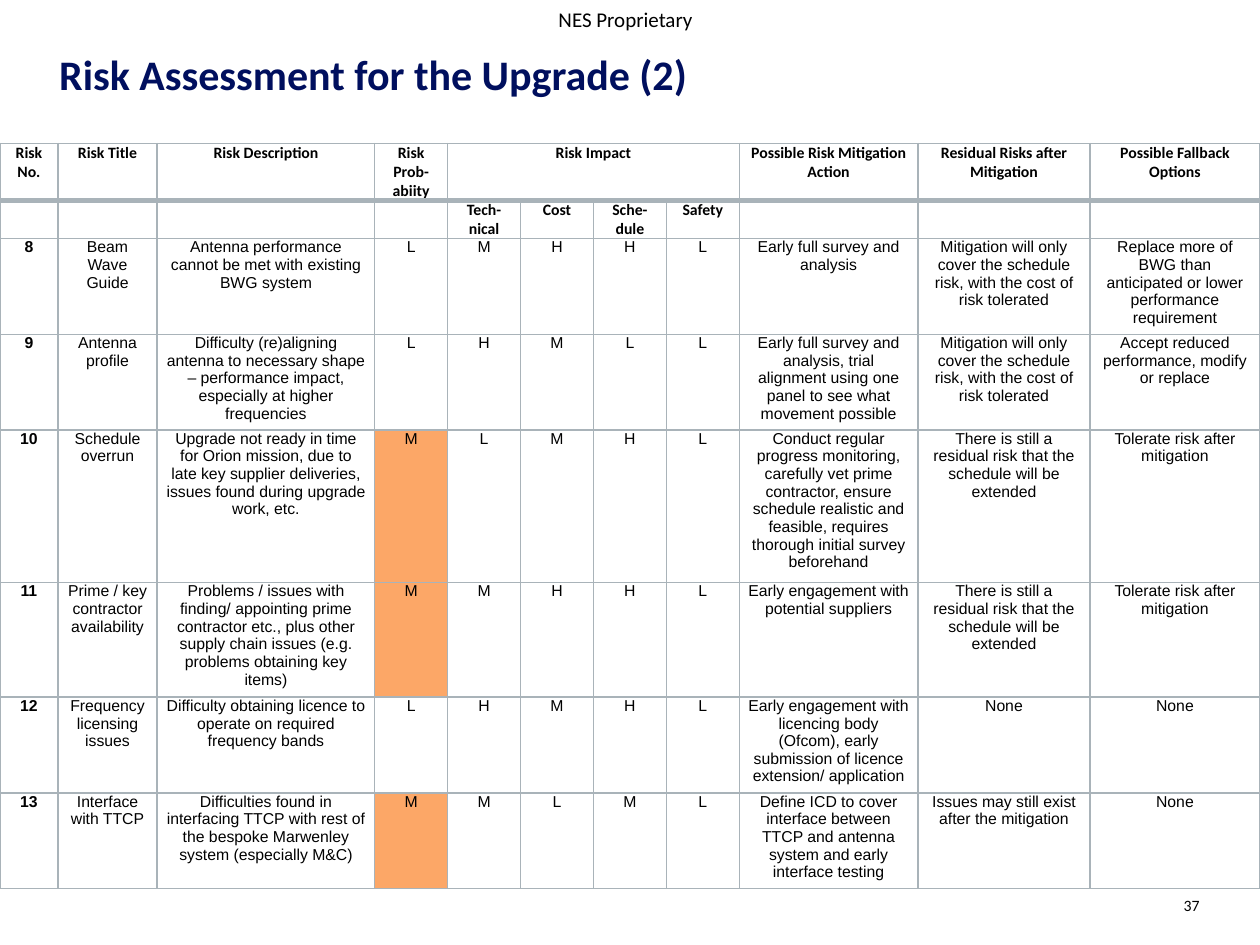
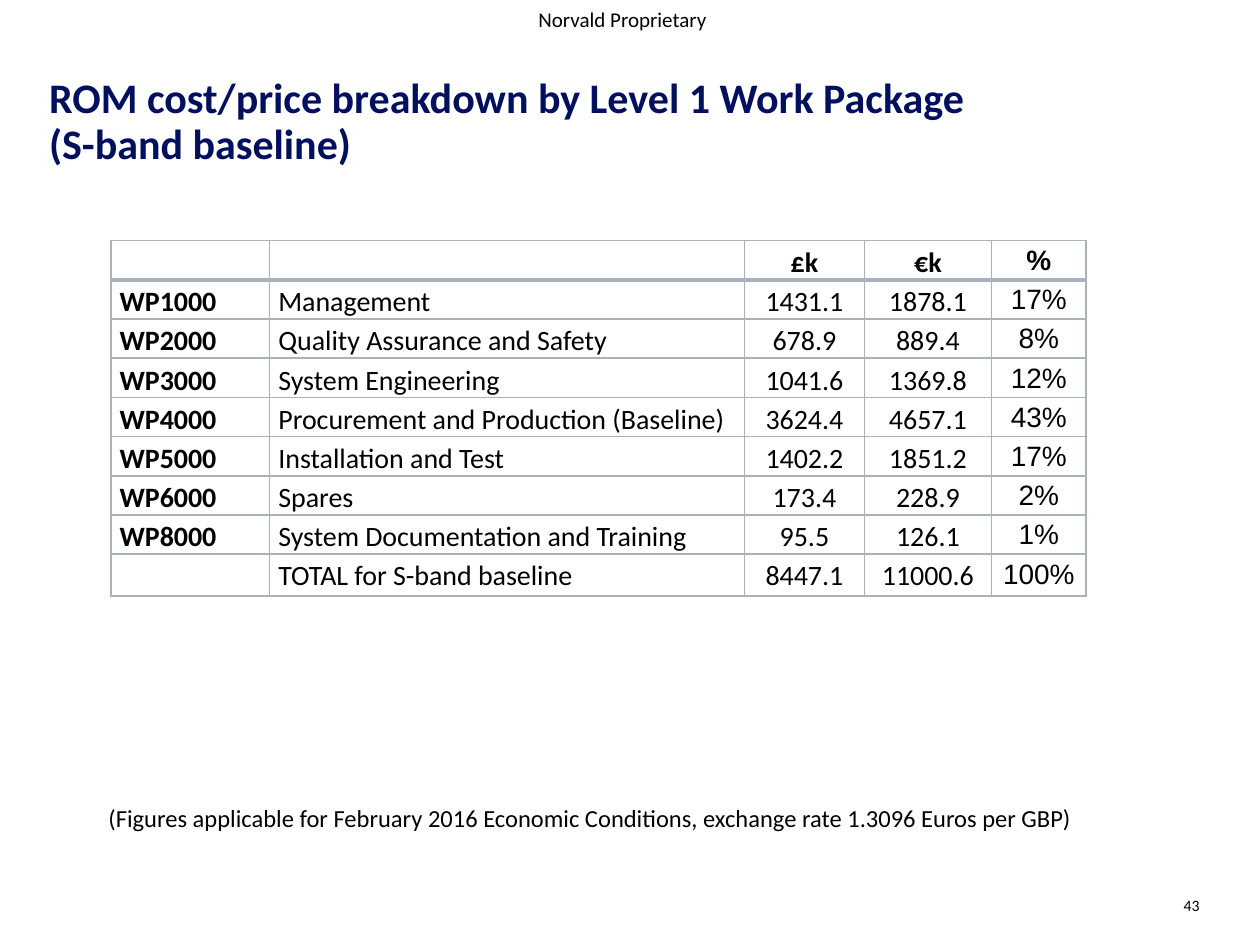
from collections import namedtuple

from lxml.etree import SubElement
from pptx import Presentation
from pptx.dml.color import RGBColor
from pptx.enum.text import MSO_ANCHOR, MSO_AUTO_SIZE, PP_ALIGN
from pptx.oxml.ns import qn
from pptx.util import Emu, Inches, Pt

COLOURS = {
    "title": "000F5E",
    "text": "000000",
    "border": "A9B3B9",
    "medium risk": "FCA767",
}
SLIDE_WIDTH, SLIDE_HEIGHT = Inches(10), Inches(7.5)
GRID_COLUMNS, GRID_ROWS = 100, 75
THIN_LINE, HEADER_LINE = Pt(1), Pt(3)

Box = namedtuple("Box", "left top width height")
Style = namedtuple("Style", "font paragraph colour", defaults=("text",))

PLAIN_FRAME = {
    "word_wrap": True,
    "auto_size": MSO_AUTO_SIZE.NONE,
    "vertical_anchor": MSO_ANCHOR.TOP,
    "margin_left": 0,
    "margin_top": 0,
    "margin_right": 0,
    "margin_bottom": 0,
}
CELL_MARGINS = {
    "margin_left": Inches(0.07),
    "margin_right": Inches(0.07),
    "margin_top": 0,
    "margin_bottom": 0,
}
CENTRED = {"alignment": PP_ALIGN.CENTER}
TITLE_STYLE = Style(
    {"name": "Calibri", "size": Pt(24), "bold": True},
    {"alignment": PP_ALIGN.LEFT, "line_spacing": Pt(26)},
    "title",
)
NUMBER_STYLE = Style(
    {"name": "Calibri", "size": Pt(9)},
    {"alignment": PP_ALIGN.RIGHT, "line_spacing": Pt(11)},
)
MARKING_STYLE = Style({"name": "Calibri", "size": Pt(12)}, CENTRED)
NOTE_STYLE = Style({"name": "Calibri", "size": Pt(14)}, CENTRED)

RISK_HEADER = [
    "Risk No.", "Risk Title", "Risk Description", "Risk Prob-abiity", "Risk Impact",
    "", "", "", "Possible Risk Mitigation Action",
    "Residual Risks after Mitigation", "Possible Fallback Options",
]
IMPACT_HEADER = ["", "", "", "", "Tech-nical", "Cost", "Sche-\ndule", "Safety", "", "", ""]
SCHEDULE_RESIDUAL = (
    "Mitigation will only cover the schedule risk, with the cost of risk tolerated"
)
EXTENSION_RESIDUAL = "There is still a residual risk that the schedule will be extended"
RISKS = [
    ["8", "Beam Wave Guide",
     "Antenna performance cannot be met with existing BWG system", *"LMHHL",
     "Early full survey and analysis", SCHEDULE_RESIDUAL,
     "Replace more of BWG than anticipated or lower performance requirement"],
    ["9", "Antenna profile",
     "Difficulty (re)aligning antenna to necessary shape – performance impact, "
     "especially at higher frequencies", *"LHMLL",
     "Early full survey and analysis, trial alignment using one panel to see "
     "what movement possible", SCHEDULE_RESIDUAL,
     "Accept reduced performance, modify or replace"],
    ["10", "Schedule overrun",
     "Upgrade not ready in time for Orion mission, due to late key supplier "
     "deliveries, issues found during upgrade work, etc.", *"MLMHL",
     "Conduct regular progress monitoring, carefully vet prime contractor, ensure "
     "schedule realistic and feasible, requires thorough initial survey beforehand",
     EXTENSION_RESIDUAL, "Tolerate risk after mitigation"],
    ["11", "Prime / key contractor availability",
     "Problems / issues with finding/ appointing prime contractor etc., plus other "
     "supply chain issues (e.g. problems obtaining key items)", *"MMHHL",
     "Early engagement with potential suppliers",
     EXTENSION_RESIDUAL, "Tolerate risk after mitigation"],
    ["12", "Frequency licensing issues",
     "Difficulty obtaining licence to operate on required frequency bands", *"LHMHL",
     "Early engagement with licencing body (Ofcom), early submission of licence "
     "extension/ application", "None", "None"],
    ["13", "Interface with TTCP",
     "Difficulties found in interfacing TTCP with rest of the bespoke Marwenley "
     "system (especially M&C)", *"MMLML",
     "Define ICD to cover interface between TTCP and antenna system and early "
     "interface testing", "Issues may still exist after the mitigation", "None"],
]
RISK_COLUMNS = [0.46, 0.79, 1.73] + [0.58] * 5 + [1.42, 1.37, 1.35]
RISK_ROWS = [0.45, 0.3, 0.76, 0.76, 1.21, 0.91, 0.76, 0.76]
PROBABILITY_COLUMN = 3
IMPACT_COLUMNS = (4, 7)

COSTS = [
    ["", "", "£k", "€k", "%"],
    ["WP1000", "Management", "1431.1", "1878.1", "17%"],
    ["WP2000", "Quality Assurance and Safety", "678.9", "889.4", "8%"],
    ["WP3000", "System Engineering", "1041.6", "1369.8", "12%"],
    ["WP4000", "Procurement and Production (Baseline)", "3624.4", "4657.1", "43%"],
    ["WP5000", "Installation and Test", "1402.2", "1851.2", "17%"],
    ["WP6000", "Spares", "173.4", "228.9", "2%"],
    ["WP8000", "System Documentation and Training", "95.5", "126.1", "1%"],
    ["", "TOTAL for S-band baseline", "8447.1", "11000.6", "100%"],
]
COST_COLUMNS = [1.26, 3.77, 0.95, 1.01, 0.75]
COST_ROWS = [0.31] * 8 + [0.33]
PERCENT_COLUMN = 4


def set_attributes(target, values):
    """Set every named value on the target."""
    for name, value in values.items():
        setattr(target, name, value)


def to_lengths(box):
    """Turn a box in grid columns and rows into slide lengths."""
    column, row = SLIDE_WIDTH / GRID_COLUMNS, SLIDE_HEIGHT / GRID_ROWS
    steps = (column, row, column, row)
    return Box(*(Emu(round(size * step)) for size, step in zip(box, steps)))


def write_text(text_frame, text, style):
    """Write one paragraph per line of text in the given style."""
    text_frame.text = text
    for paragraph in text_frame.paragraphs:
        set_attributes(paragraph, style.paragraph)
        for run in paragraph.runs:
            set_attributes(run.font, style.font)
            run.font.color.rgb = RGBColor.from_string(COLOURS[style.colour])
        if not paragraph.runs:
            size = round(style.font["size"].pt * 100)
            SubElement(paragraph._p, qn("a:endParaRPr"), sz=str(size))


def fill_placeholder(shape, box, text, style, frame=PLAIN_FRAME):
    """Move a placeholder to its box and write its text."""
    set_attributes(shape, to_lengths(box)._asdict())
    set_attributes(shape.text_frame, frame)
    write_text(shape.text_frame, text, style)


def add_text(slide, box, text, style, frame=PLAIN_FRAME):
    """Add a text box in the given box."""
    shape = slide.shapes.add_textbox(*to_lengths(box))
    set_attributes(shape.text_frame, frame)
    write_text(shape.text_frame, text, style)


def add_border(cell, side, width):
    """Draw one side of a table cell."""
    line = SubElement(cell._tc.get_or_add_tcPr(), qn(f"a:ln{side}"), w=str(width))
    fill = SubElement(line, qn("a:solidFill"))
    SubElement(fill, qn("a:srgbClr"), val=COLOURS["border"])


def add_grid_table(slide, box, rows, column_shares, row_shares, style_for, merge=None):
    """Add a ruled table whose columns and rows share out its box."""
    lengths = to_lengths(box)
    frame = slide.shapes.add_table(len(rows), len(column_shares), *lengths)
    table = frame.table
    set_attributes(table, {"first_row": False, "horz_banding": False})
    for column, share in zip(table.columns, column_shares):
        column.width = round(lengths.width * share / sum(column_shares))
    for row, share in zip(table.rows, row_shares):
        row.height = round(lengths.height * share / sum(row_shares))
    for row_index, values in enumerate(rows):
        widths = {
            "L": THIN_LINE,
            "R": THIN_LINE,
            "T": HEADER_LINE if row_index == 1 else THIN_LINE,
            "B": HEADER_LINE if row_index == 0 else THIN_LINE,
        }
        for column_index, text in enumerate(values):
            cell = table.cell(row_index, column_index)
            set_attributes(cell, CELL_MARGINS)
            write_text(cell.text_frame, text, style_for(row_index, column_index))
            for side, width in widths.items():
                add_border(cell, side, width)
            cell.fill.background()
    if merge:
        first, last = merge
        table.cell(0, first).merge(table.cell(0, last))
    return table


def risk_style(row, column):
    """Return the style of one risk table cell."""
    header = row < 2
    font = {
        "name": "Calibri" if header else "Arial",
        "size": Pt(9),
        "bold": header or column == 0,
    }
    return Style(font, CENTRED)


def cost_style(row, column):
    """Return the style of one cost table cell."""
    font = {
        "name": "Arial" if column == PERCENT_COLUMN else "Calibri",
        "size": Pt(16),
        "bold": row == 0 or column == 0,
    }
    alignment = PP_ALIGN.JUSTIFY if column < 2 else PP_ALIGN.CENTER
    return Style(font, {"alignment": alignment, "line_spacing": 1.15})


def add_frame_slide(presentation, layout_name, title, title_box, number, marking, marking_box):
    """Add a slide with its title, page number and marking."""
    layout = presentation.slide_layouts.get_by_name(layout_name)
    slide = presentation.slides.add_slide(layout)
    fill_placeholder(slide.shapes.title, title_box, title, TITLE_STYLE)
    add_text(slide, Box(89.3, 71.1, 5.9, 2.4), number, NUMBER_STYLE)
    add_text(slide, marking_box, marking, MARKING_STYLE,
             {"word_wrap": False, "auto_size": MSO_AUTO_SIZE.SHAPE_TO_FIT_TEXT})
    return slide


def add_risk_slide(presentation):
    """Build the risk assessment slide."""
    slide = add_frame_slide(
        presentation, "Title Only", "Risk Assessment for the Upgrade (2)",
        Box(4.7, 4.2, 72.1, 8.4), "37", "NES Proprietary", Box(43.1, 0, 13.1, 3),
    )
    rows = [RISK_HEADER, IMPACT_HEADER, *RISKS]
    table = add_grid_table(slide, Box(0, 11.4, 100, 59.1), rows,
                           RISK_COLUMNS, RISK_ROWS, risk_style, IMPACT_COLUMNS)
    for row_index, values in enumerate(rows):
        if values[PROBABILITY_COLUMN] == "M":
            fill = table.cell(row_index, PROBABILITY_COLUMN).fill
            fill.solid()
            fill.fore_color.rgb = RGBColor.from_string(COLOURS["medium risk"])


def add_cost_note(slide, box):
    """Write the unbulleted note below the cost table."""
    body = slide.placeholders[1]
    margins = {"margin_top": Inches(0.21), "margin_right": Inches(0.63)}
    fill_placeholder(
        body, box,
        "(Figures applicable for February 2016 Economic Conditions, "
        "exchange rate 1.3096 Euros per GBP)",
        NOTE_STYLE, {**PLAIN_FRAME, **margins},
    )
    properties = body.text_frame.paragraphs[0]._p.get_or_add_pPr()
    properties.set("marL", "0")
    properties.set("indent", "0")
    SubElement(properties, qn("a:buNone"))


def add_cost_slide(presentation):
    """Build the cost breakdown slide."""
    slide = add_frame_slide(
        presentation, "Title and Content",
        "ROM cost/price breakdown by Level 1 Work Package (S-band baseline)",
        Box(3.9, 6.1, 74.9, 8.4), "43", "Norvald Proprietary", Box(41.3, 0, 16.2, 3),
    )
    add_cost_note(slide, Box(0, 61.6, 100, 13.4))
    add_grid_table(slide, Box(8.8, 19.1, 77.4, 28.2), COSTS,
                   COST_COLUMNS, COST_ROWS, cost_style)


def main():
    """Build and save the presentation."""
    presentation = Presentation()
    set_attributes(presentation, {"slide_width": SLIDE_WIDTH, "slide_height": SLIDE_HEIGHT})
    add_risk_slide(presentation)
    add_cost_slide(presentation)
    presentation.save("out.pptx")


if __name__ == "__main__":
    main()
